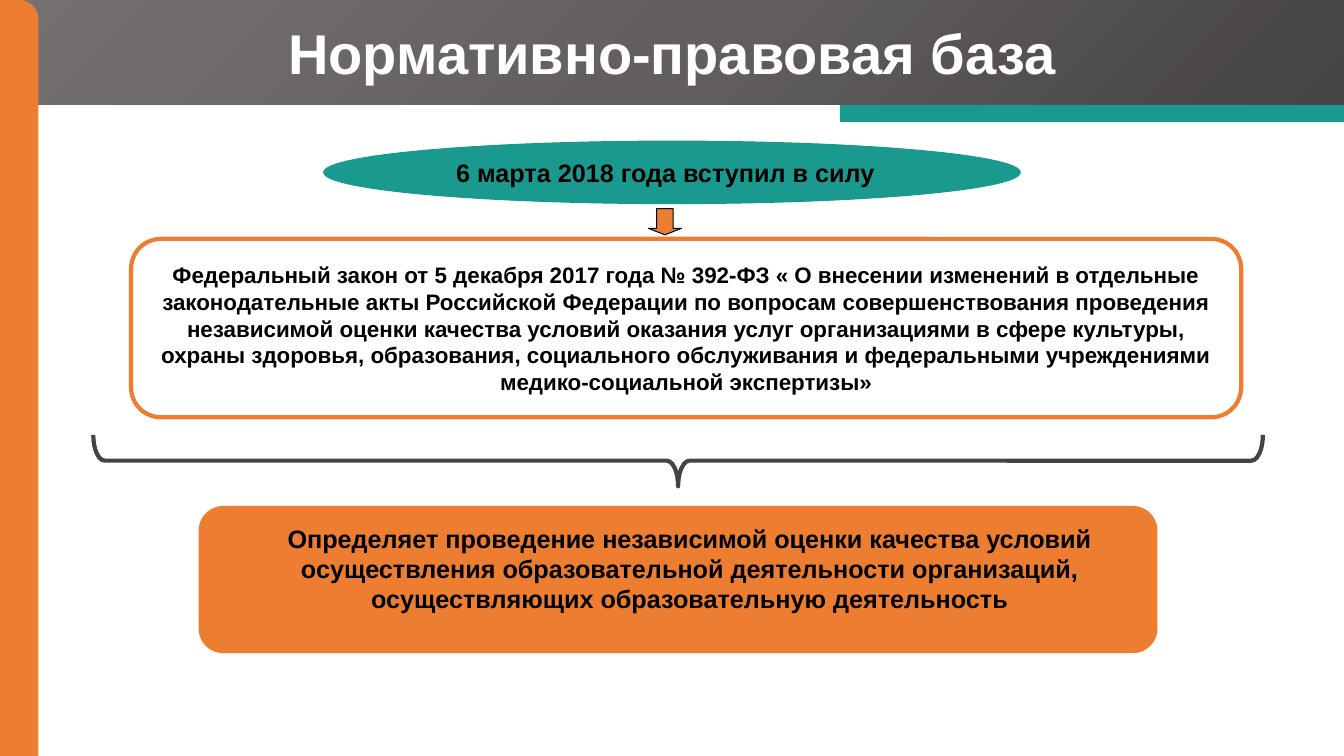
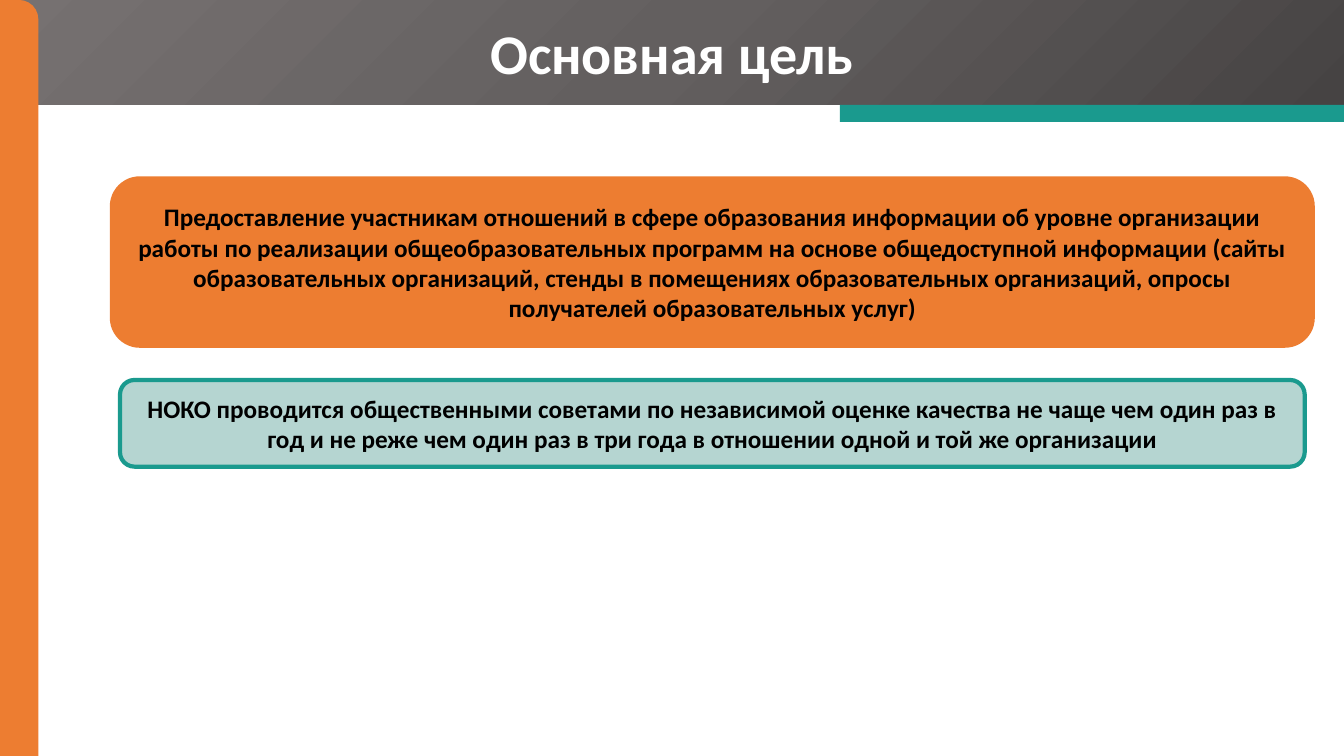
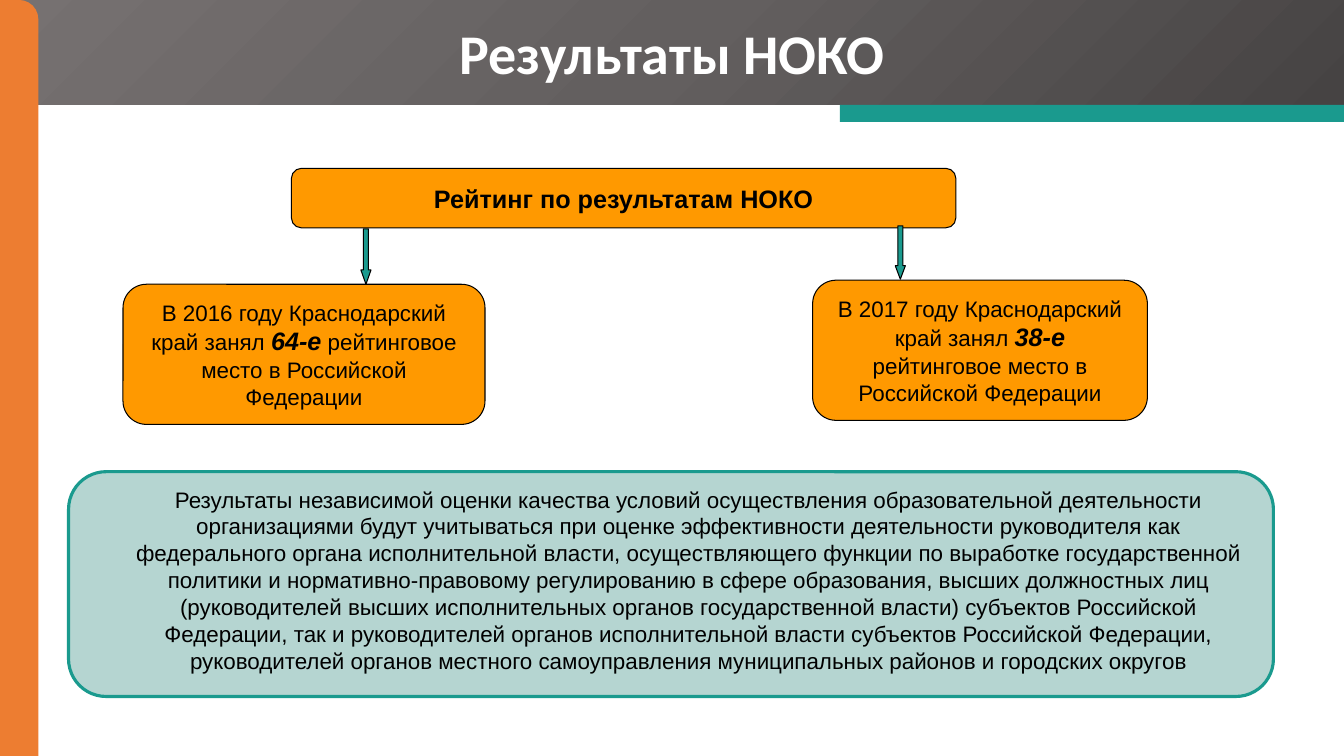
from copy import deepcopy

from pptx import Presentation
from pptx.dml.color import RGBColor
from pptx.enum.shapes import MSO_SHAPE
from pptx.enum.text import MSO_ANCHOR, MSO_AUTO_SIZE, PP_ALIGN
from pptx.oxml.ns import qn
from pptx.util import Inches, Pt

RECT = MSO_SHAPE.RECTANGLE
STRIP = MSO_SHAPE.ROUND_1_RECTANGLE
ROUND = MSO_SHAPE.ROUNDED_RECTANGLE
OVAL = MSO_SHAPE.OVAL
BRACE = MSO_SHAPE.RIGHT_BRACE
DOWN = MSO_SHAPE.DOWN_ARROW
TOP, MIDDLE = MSO_ANCHOR.TOP, MSO_ANCHOR.MIDDLE
CENTER = PP_ALIGN.CENTER
NONE = MSO_AUTO_SIZE.NONE

WIDE, HIGH, BAND = 13.33, 7.5, 1.04
ORANGE, AMBER = "ED7D31", "FF9900"
TEAL, MINT = "1A9A8E", "B5D5D1"
GRAY, BLACK, WHITE = "474343", "000000", "FFFFFF"
SHADES = [(0, "464343"), (0.5, "635F5F"), (1, "767171")]
CORNER = [0.167]
THIN = (BLACK, 0.75)

LAW = (
    "Федеральный закон от 5 декабря 2017 года № 392-ФЗ « О внесении изменений в отдельные "
    "законодательные акты Российской Федерации по вопросам совершенствования проведения "
    "независимой оценки качества условий оказания услуг организациями в сфере культуры, "
    "охраны здоровья, образования, социального обслуживания и федеральными учреждениями "
    "медико-социальной экспертизы»"
)
SCOPE = (
    "Определяет проведение независимой оценки качества условий осуществления "
    "образовательной деятельности организаций, осуществляющих образовательную деятельность"
)
GOAL = (
    "Предоставление участникам отношений в сфере образования информации об уровне "
    "организации работы по реализации общеобразовательных программ на основе общедоступной "
    "информации (сайты образовательных организаций, стенды в помещениях образовательных "
    "организаций, опросы получателей образовательных услуг)"
)
TERM = (
    "НОКО проводится общественными советами по независимой оценке качества не чаще чем один "
    "раз в год и не реже чем один раз в три года в отношении одной и той же организации"
)
EFFECT = (
    "Результаты независимой оценки качества условий осуществления образовательной "
    "деятельности организациями будут учитываться при оценке эффективности деятельности "
    "руководителя как федерального органа исполнительной власти, осуществляющего функции по "
    "выработке государственной политики и нормативно-правовому регулированию в сфере "
    "образования, высших должностных лиц (руководителей высших исполнительных органов "
    "государственной власти) субъектов Российской Федерации, так и руководителей органов "
    "исполнительной власти субъектов Российской Федерации, руководителей органов местного "
    "самоуправления муниципальных районов и городских округов"
)
RANKS = [
    ("В 2016 году Краснодарский край занял ", "64-е",
     " рейтинговое место в Российской Федерации"),
    ("В 2017 году Краснодарский край занял ", "38-е ",
     "рейтинговое место в Российской Федерации"),
]

SLIDES = [
    ("Нормативно-правовая база", "Arial", [
        dict(kind=ROUND, at=(1.3, 2.37, 11.01, 1.77), adj=CORNER, line=(ORANGE, 3),
             text=[LAW], size=16, bold=True),
        dict(kind=BRACE, at=(6.47, -1.23, 0.51, 11.6), adj=[0.222, 0.5],
             line=(GRAY, 3), turn=90),
        dict(kind=ROUND, at=(1.97, 5.02, 9.51, 1.46), adj=CORNER, fill=ORANGE,
             text=[SCOPE], size=18, bold=True, anchor=TOP, pad=(0.28, 0.1, 0.05, 0.05)),
        dict(kind=OVAL, at=(3.21, 1.4, 6.91, 0.62), fill=TEAL, line=(TEAL, 0.75),
             text=["6 марта 2018 года вступил в силу"], size=18, bold=True,
             pad=(0.1, 0.05, 0.23, 0.05)),
        dict(kind=DOWN, at=(6.43, 2.07, 0.33, 0.26), adj=[0.5, 0.25],
             fill=ORANGE, line=THIN),
    ]),
    ("Основная цель", "Calibri", [
        dict(kind=ROUND, at=(1.11, 1.77, 11.91, 1.66), adj=CORNER, fill=ORANGE,
             line=(ORANGE, 3), text=[GOAL], size=18, bold=True),
        dict(kind=ROUND, at=(1.19, 3.77, 11.75, 0.86), adj=CORNER, fill=MINT,
             line=(TEAL, 3), text=[TERM], size=18, bold=True),
    ]),
    ("Результаты НОКО", "Calibri", [
        dict(kind=ROUND, at=(0.68, 4.68, 11.95, 2.23), adj=CORNER, fill=MINT,
             line=(TEAL, 2.25), text=[EFFECT], size=16, anchor=TOP,
             pad=(0.4, 0.03, 0.05, 0.03)),
        dict(kind=ROUND, at=(2.89, 1.67, 6.59, 0.59), adj=CORNER, fill=AMBER, line=THIN,
             text=["Рейтинг по результатам НОКО"], size=18, bold=True),
        dict(kind=ROUND, at=(1.22, 2.82, 3.59, 1.39), adj=CORNER, fill=AMBER, line=THIN,
             text=RANKS[0], size=16),
        dict(kind=ROUND, at=(8.06, 2.78, 3.32, 1.39), adj=CORNER, fill=AMBER, line=THIN,
             text=RANKS[1], size=16),
        dict(kind=DOWN, at=(3.58, 2.27, 0.1, 0.55), adj=[0.5, 1.415], fill=TEAL, line=THIN),
        dict(kind=DOWN, at=(8.88, 2.24, 0.1, 0.53), adj=[0.5, 1.333], fill=TEAL, line=THIN),
    ]),
]


def color(code):
    return RGBColor.from_string(code)


def style(run, font, size, bold, code):
    run.font.name, run.font.size, run.font.bold = font, Pt(size), bold
    run.font.color.rgb = color(code)


def write(shape, text, size, font, bold, anchor, pad):
    frame = shape.text_frame
    frame.word_wrap, frame.vertical_anchor = True, anchor
    (frame.margin_left, frame.margin_top,
     frame.margin_right, frame.margin_bottom) = [Inches(n) for n in pad]
    para = frame.paragraphs[0]
    para.alignment = CENTER
    for i, piece in enumerate(text):
        run = para.add_run()
        run.text = piece
        strong = i == 1
        style(run, font, 18 if strong else size, bold or strong, BLACK)
        run.font.italic = strong


def draw(slide, kind, at, fill=None, line=None, adj=(), turn=0, text=(), size=16,
         font="Arial", bold=False, anchor=MIDDLE, pad=(0.1, 0.05, 0.1, 0.05)):
    shape = slide.shapes.add_shape(kind, *[Inches(n) for n in at])
    shape.shadow.inherit = False
    shape.rotation = turn
    for i, value in enumerate(adj):
        shape.adjustments[i] = value
    if fill:
        shape.fill.solid()
        shape.fill.fore_color.rgb = color(fill)
    else:
        shape.fill.background()
    if line:
        shape.line.color.rgb = color(line[0])
        shape.line.width = Pt(line[1])
    else:
        shape.line.fill.background()
    if text:
        write(shape, text, size, font, bold, anchor, pad)


def shade(shape):
    fill = shape.fill
    fill.gradient()
    fill.gradient_angle = 135
    stops = shape._element.spPr.find(qn("a:gradFill")).find(qn("a:gsLst"))
    stops.append(deepcopy(stops[0]))
    for stop, (place, code) in zip(fill.gradient_stops, SHADES):
        stop.position = place
        stop.color.rgb = color(code)


def start(deck, name, font):
    slide = deck.slides.add_slide(deck.slide_layouts[5])
    title = slide.shapes.title
    title.left = title.top = 0
    title.width, title.height = Inches(WIDE), Inches(BAND)
    shade(title)
    frame = title.text_frame
    frame.text = name
    frame.auto_size, frame.vertical_anchor = NONE, MIDDLE
    para = frame.paragraphs[0]
    para.alignment = CENTER
    style(para.runs[0], font, 40, True, WHITE)
    draw(slide, STRIP, (0, 0, 0.38, HIGH), ORANGE, adj=[0.5])
    draw(slide, RECT, (WIDE - 5, BAND, 5, 0.17), TEAL)
    return slide


def main():
    deck = Presentation()
    deck.slide_width, deck.slide_height = Inches(WIDE), Inches(HIGH)
    for name, font, parts in SLIDES:
        slide = start(deck, name, font)
        for part in parts:
            face = "Calibri" if name == "Основная цель" else "Arial"
            draw(slide, font=face, **part)
    deck.save("out.pptx")


if __name__ == "__main__":
    main()
